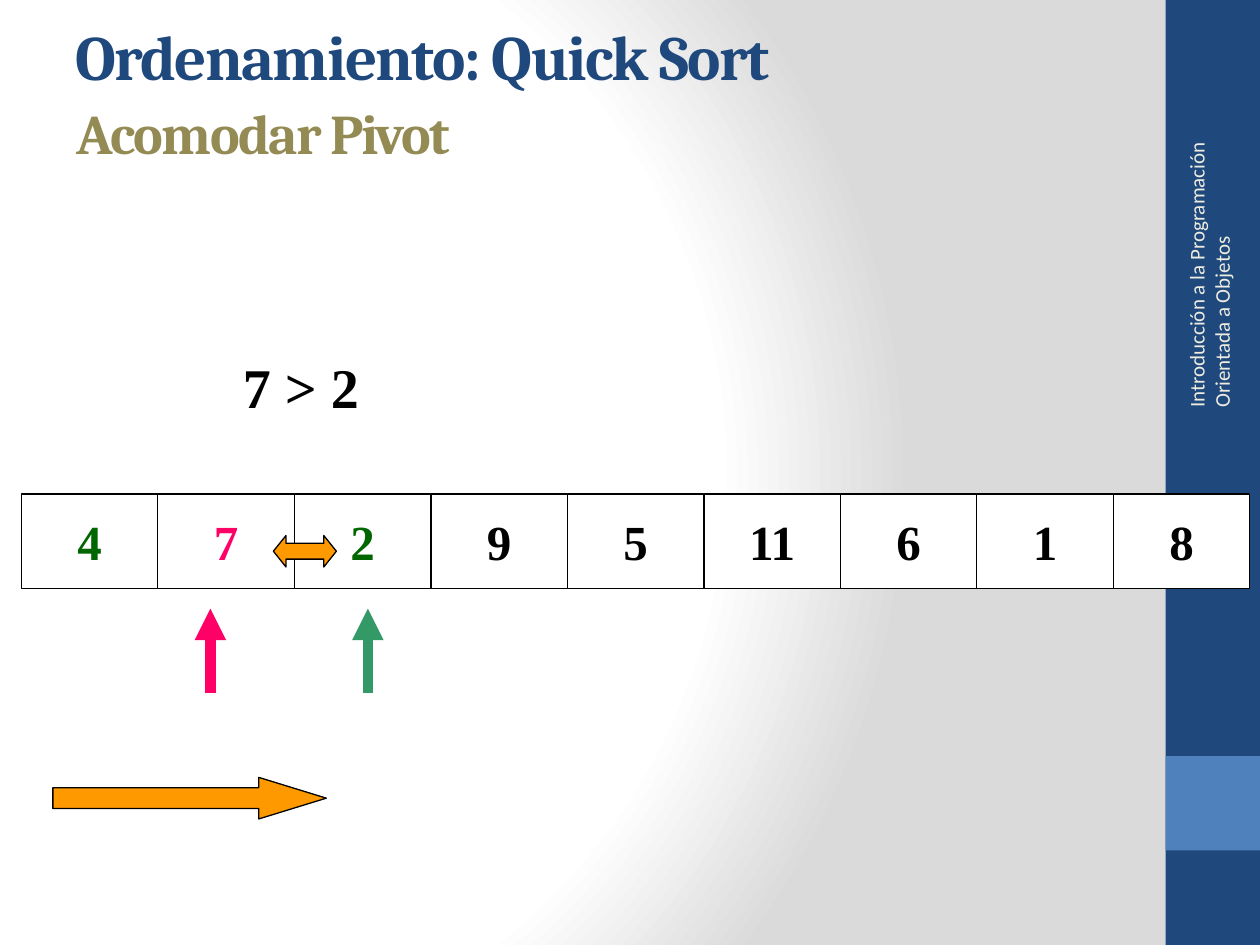
from lxml import etree
from pptx import Presentation
from pptx.dml.color import RGBColor
from pptx.enum.shapes import MSO_CONNECTOR, MSO_SHAPE
from pptx.enum.text import MSO_ANCHOR, MSO_AUTO_SIZE, PP_ALIGN
from pptx.oxml import parse_xml
from pptx.oxml.ns import qn
from pptx.util import Inches, Pt

RECT = MSO_SHAPE.RECTANGLE
DOUBLE_ARROW, RIGHT_ARROW = MSO_SHAPE.LEFT_RIGHT_ARROW, MSO_SHAPE.RIGHT_ARROW
STRAIGHT = MSO_CONNECTOR.STRAIGHT
MIDDLE, TOP = MSO_ANCHOR.MIDDLE, MSO_ANCHOR.TOP
CENTER, LEFT = PP_ALIGN.CENTER, PP_ALIGN.LEFT
NO_AUTOFIT = MSO_AUTO_SIZE.NONE

rgb = RGBColor.from_string
NAVY, BLUE, BLACK, WHITE = "1F497D", "4F81BD", "000000", "FFFFFF"
GREEN, PINK, TEAL, ORANGE = "006600", "FF0066", "339966", "FF9900"


def add_filled(kind, x, y, w, h, fill, line=None):
    sp = s.shapes.add_shape(kind, Inches(x), Inches(y), Inches(w), Inches(h))
    sp.shadow.inherit = False
    sp.fill.solid()
    sp.fill.fore_color.rgb = rgb(fill)
    if line:
        sp.line.color.rgb = rgb(line)
        sp.line.width = Pt(0.75)
    else:
        sp.line.fill.background()
    return sp


def write(sp, text, font, size, color, bold=True, align=LEFT, anchor=TOP, wrap=True, spacing=0):
    """Fill a shape with one formatted run; spacing is in hundredths of a point."""
    tf = sp.text_frame
    for name, value in {"auto_size": NO_AUTOFIT, "word_wrap": wrap, "vertical_anchor": anchor}.items():
        setattr(tf, name, value)
    p = tf.paragraphs[0]
    p.alignment = align
    r = p.add_run()
    r.text = text
    for name, value in {"name": font, "size": Pt(size), "bold": bold}.items():
        setattr(r.font, name, value)
    r.font.color.rgb = rgb(color)
    if spacing:
        r.font._element.set("spc", str(spacing))


prs = Presentation()
prs.slide_width, prs.slide_height = Inches(10), Inches(7.5)
s = prs.slides.add_slide(prs.slide_layouts[5])

# Background: radial gradient
s.background.fill.solid()
bg = s.background._cSld.bg.bgPr
stops = "".join(
    f'<a:gs pos="{pos}000"><a:srgbClr val="{color}"/></a:gs>'
    for pos, color in ((0, WHITE), (75, WHITE), (100, "DADADA"))
)
bg.replace(bg[0], parse_xml(
    '<a:gradFill xmlns:a="http://schemas.openxmlformats.org/drawingml/2006/main" rotWithShape="1">'
    f'<a:gsLst>{stops}</a:gsLst><a:path path="circle">'
    '<a:fillToRect l="20000" t="50000" r="100000" b="50000"/></a:path></a:gradFill>'
))

# Side band with the course name
add_filled(RECT, 9.25, 0, 0.75, 7.5, NAVY)
add_filled(RECT, 9.25, 6, 0.75, 0.75, BLUE)
course = s.shapes.add_textbox(Inches(8.26), Inches(1.8), Inches(2.67), Inches(0.4))
course.rotation = 270
write(course, "Introducción a la Programación Orientada a Objetos", "Calibri", 12, "EEECE1",
      bold=False, anchor=MIDDLE)

# Array cells
cell_w = 13 / 12
cell_colors = {"4": GREEN, "7": PINK, "2": GREEN}
for i, value in enumerate("4 7 2 9 5 11 6 1 8".split()):
    cell = add_filled(RECT, 0.17 + i * cell_w, 3.92, cell_w, 0.75, WHITE, BLACK)
    write(cell, value, "Times New Roman", 28, cell_colors.get(value, BLACK),
          align=CENTER, anchor=MIDDLE, wrap=False)

# Pointers to the compared cells
for x, color in ((1.67, PINK), (2.92, TEAL)):
    pointer = s.shapes.add_connector(STRAIGHT, Inches(x), Inches(5.5), Inches(x), Inches(4.83))
    pointer.line.color.rgb = rgb(color)
    pointer.line.width = Pt(6)
    etree.SubElement(pointer.line._get_or_add_ln(), qn("a:tailEnd"), type="triangle")
    etree.SubElement(pointer._element.spPr, qn("a:effectLst"))

# Swap and direction arrows
for kind, box, head in (
    (DOUBLE_ARROW, (2.17, 4.25, 0.5, 0.25), 0.4),
    (RIGHT_ARROW, (0.42, 6.17, 2.17, 0.33), 1.625),
):
    arrow = add_filled(kind, *box, ORANGE, BLACK)
    arrow.adjustments[0], arrow.adjustments[1] = 0.5, head

comparison = s.shapes.add_textbox(Inches(1.83), Inches(2.75), Inches(1.92), Inches(0.63))
write(comparison, "7 > 2", "Times New Roman", 32, BLACK)

# Title and subtitle
title = s.shapes.title
for name, value in {"left": 0.5, "top": 0.09, "width": 8.98, "height": 0.66}.items():
    setattr(title, name, Inches(value))
write(title, "Ordenamiento: Quick Sort", "Cambria", 36, NAVY, spacing=-100)
subtitle = s.shapes.add_textbox(Inches(0.51), Inches(0.73), Inches(8.98), Inches(0.66))
write(subtitle, "Acomodar Pivot", "Cambria", 32, "948A54", spacing=-100)

prs.save("out.pptx")
